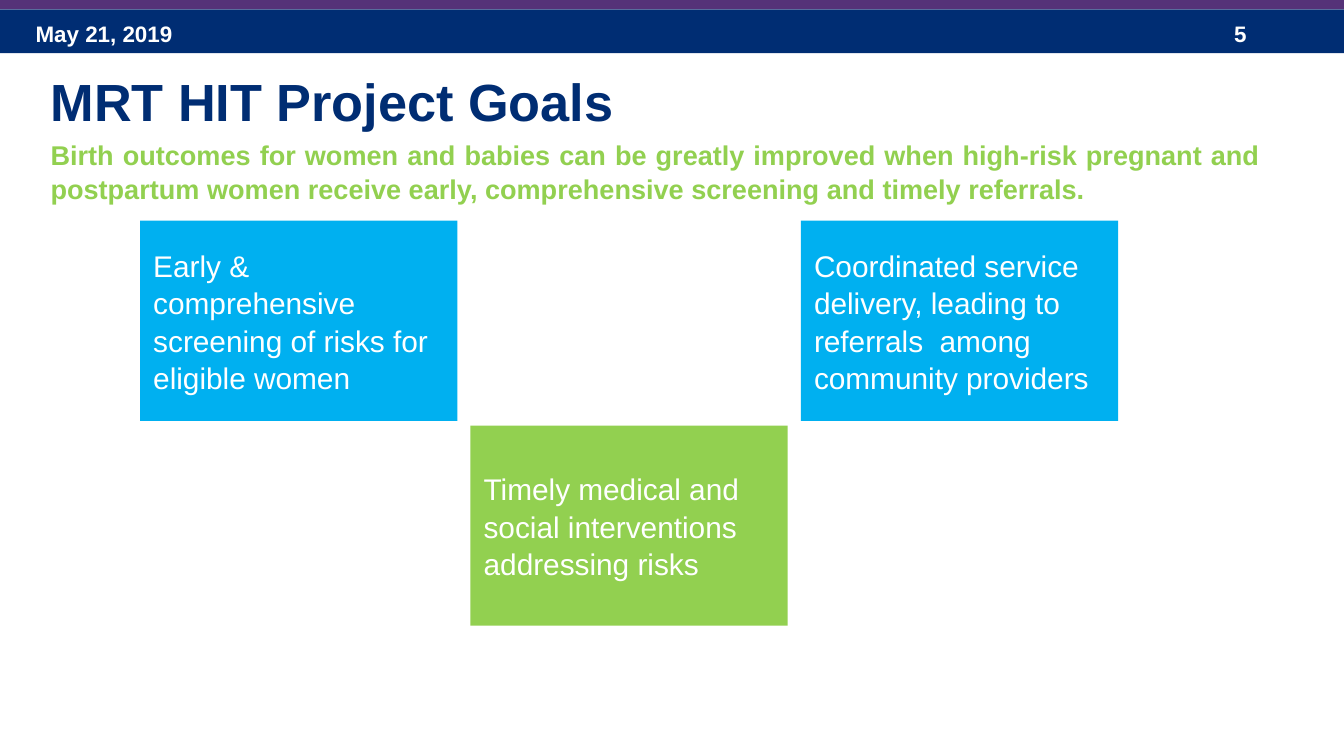
from dataclasses import dataclass
from pptx import Presentation
from pptx.dml.color import RGBColor
from pptx.enum.shapes import MSO_SHAPE
from pptx.enum.text import MSO_ANCHOR, PP_ALIGN
from pptx.util import Pt

RECT = MSO_SHAPE.RECTANGLE
TOP, MIDDLE, BOTTOM = MSO_ANCHOR.TOP, MSO_ANCHOR.MIDDLE, MSO_ANCHOR.BOTTOM
LEFT, JUSTIFY = PP_ALIGN.LEFT, PP_ALIGN.JUSTIFY


@dataclass(frozen=True)
class Theme:
    font: str = "Arial"
    navy: str = "002D73"
    purple: str = "553278"
    green: str = "92D050"
    blue: str = "00B0F0"
    white: str = "FFFFFF"
    header: float = 12
    subtitle: float = 14.5
    title: float = 28
    goal: float = 16


T = Theme()

DATE = "May 21, 2019"
PAGE = "5"
TITLE = "MRT HIT Project Goals"
SUBTITLE = ("Birth outcomes for women and babies can be greatly improved when "
            "high-risk pregnant and postpartum women receive early, "
            "comprehensive screening and timely referrals.")
GOALS = [
    ("Early & comprehensive screening of risks for eligible women", T.blue),
    ("Timely medical and social interventions addressing risks", T.green),
    ("Coordinated service delivery, leading to referrals  among community providers",
     T.blue),
]

WIDTH, HEIGHT = 720, 405
GOAL_X, GOAL_Y, GOAL_W, GOAL_H = 75, 118.3, 170, 107.2
STEP_X, STEP_Y = 177, 109.7

prs = Presentation()
prs.slide_width, prs.slide_height = Pt(WIDTH), Pt(HEIGHT)
s = prs.slides.add_slide(prs.slide_layouts[6])


def add_rect(box, color):
    sp = s.shapes.add_shape(RECT, *map(Pt, box))
    sp.shadow.inherit = False
    sp.fill.solid()
    sp.fill.fore_color.rgb = RGBColor.from_string(color)
    sp.line.fill.background()
    return sp


def write(sp, text, size, color, bold=False, align=LEFT, anchor=TOP, spacing=1.0):
    tf = sp.text_frame
    tf.word_wrap = True
    tf.vertical_anchor = anchor
    tf.text = text
    p = tf.paragraphs[0]
    p.alignment = align
    p.line_spacing = spacing
    font = p.runs[0].font
    font.name, font.size, font.bold = T.font, Pt(size), bold
    font.color.rgb = RGBColor.from_string(color)


def add_text(box, text, size, color, **style):
    write(s.shapes.add_textbox(*map(Pt, box)), text, size, color, bold=True, **style)


add_rect((0, 5, WIDTH, 23.5), T.navy)
add_text((12, 7.2, 168, 21.6), DATE, T.header, T.white)
add_text((654, 7.2, 54, 21.6), PAGE, T.header, T.white)
add_rect((0, 0, WIDTH, 5), T.purple)
add_text((20, 70, 662, 42.5), SUBTITLE, T.subtitle, T.green, align=JUSTIFY, spacing=1.04)
add_text((20, 33.5, 646, 41), TITLE, T.title, T.navy, anchor=BOTTOM, spacing=1.04)

for i, (text, color) in enumerate(GOALS):
    box = (GOAL_X + i * STEP_X, GOAL_Y + i % 2 * STEP_Y, GOAL_W, GOAL_H)
    write(add_rect(box, color), text, T.goal, T.white, anchor=MIDDLE, spacing=1.04)

prs.save("out.pptx")
